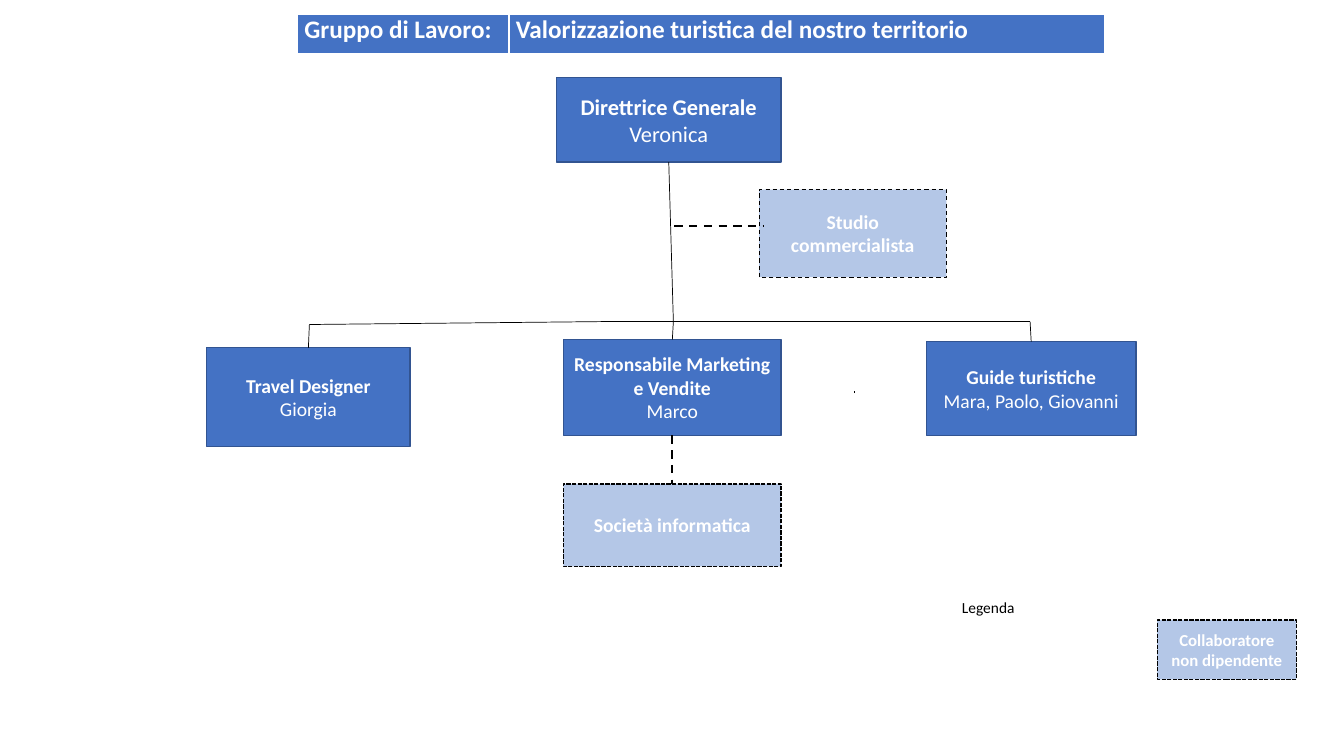
import pptx
import pptx.util
import pptx.dml.color
import pptx.enum.dml
import pptx.enum.shapes
import pptx.enum.text
import pptx.oxml.ns
import lxml.etree

Pt = pptx.util.Pt
DASH = pptx.enum.dml.MSO_LINE_DASH_STYLE
TOP, BOTTOM = 0, 2

COLORS = {"blue": "4472C4", "edge": "325491", "pale": "B4C7E7",
          "white": "FFFFFF", "black": "000000"}
FONT = "Calibri"

HEADER = ["Gruppo di Lavoro:", "Valorizzazione turistica del nostro territorio"]
HEADER_AT = (212.4, 10.1)
HEADER_WIDTHS = [151.2, 425.5]
HEADER_HEIGHT = 28

STYLES = {
    "staff": {"fill": "blue", "line": "edge", "width": 1, "dash": None},
    "partner": {"fill": "pale", "line": "black", "width": 1, "dash": DASH.SQUARE_DOT},
    "adviser": {"fill": "pale", "line": "black", "width": 0.75, "dash": DASH.DASH},
}
BOXES = {
    "director": ("staff", (397.4, 55.4, 160.6, 60.5), 16, "Direttrice Generale", "Veronica"),
    "accountant": ("adviser", (542.2, 135.4, 133.9, 62.6), 14, "Studio commercialista", None),
    "designer": ("staff", (147.6, 248.4, 145.4, 70.6), 14, "Travel Designer", "Giorgia"),
    "marketing": ("staff", (402.5, 242.6, 155.5, 68.4), 14,
                  "Responsabile Marketing e Vendite", "Marco"),
    "guides": ("staff", (661.7, 244.1, 149.8, 67), 14,
               "Guide turistiche", "Mara, Paolo, Giovanni"),
    "software": ("partner", (402.5, 345.6, 155.5, 59), 14, "Società informatica", None),
    "legend": ("partner", (826.6, 442.8, 99.4, 42.5), 12, "Collaboratore non dipendente", None),
}

HUB = (481, 229.7)
LEFT_END, RIGHT_END = (221, 231.8), (735.8, 229.7)
BAR_START = (432, 229.7)
SOLID = {"width": 0.5, "dash": None}
DASHED = {"width": 1.5, "dash": DASH.DASH}
LINES = [
    (("director", BOTTOM), HUB, SOLID),
    (HUB, ("marketing", TOP), SOLID),
    (BAR_START, LEFT_END, SOLID),
    (BAR_START, RIGHT_END, SOLID),
    (LEFT_END, ("designer", TOP), SOLID),
    (RIGHT_END, ("guides", TOP), SOLID),
    ((481.7, 161.3), (545, 161.3), DASHED),
    (("marketing", BOTTOM), ("software", TOP), DASHED),
    ((610.6, 280.8), (610.6, 279.4), SOLID),
]
LEGEND_LABEL = ("Legenda", (680, 422, 70, 24), 11)


def rgb(name):
    return pptx.dml.color.RGBColor.from_string(COLORS[name])


def write(p, text, size, bold, color="white"):
    r = p.add_run()
    r.text = text
    for key, value in {"name": FONT, "size": Pt(size), "bold": bold}.items():
        setattr(r.font, key, value)
    r.font.color.rgb = rgb(color)


def set_line(line, color, width, dash):
    line.color.rgb = rgb(color)
    for key, value in {"width": Pt(width), "dash_style": dash}.items():
        setattr(line, key, value)


def add_box(s, style, at, size, role, people):
    sp = s.shapes.add_shape(pptx.enum.shapes.MSO_SHAPE.RECTANGLE, *map(Pt, at))
    look = STYLES[style]
    sp.shadow.inherit = False
    sp.fill.solid()
    sp.fill.fore_color.rgb = rgb(look["fill"])
    set_line(sp.line, look["line"], look["width"], look["dash"])
    tf = sp.text_frame
    tf.word_wrap = True
    tf.vertical_anchor = pptx.enum.text.MSO_ANCHOR.MIDDLE
    for i, text in enumerate(filter(None, (role, people))):
        p = tf.add_paragraph() if i else tf.paragraphs[0]
        p.alignment = pptx.enum.text.PP_ALIGN.CENTER
        write(p, text, size, i == 0)
    return sp


def add_line(s, boxes, start, end, look):
    points = [(0, 0) if e[0] in boxes else e for e in (start, end)]
    c = s.shapes.add_connector(pptx.enum.shapes.MSO_CONNECTOR.STRAIGHT,
                               *(Pt(v) for point in points for v in point))
    for e, join in ((start, c.begin_connect), (end, c.end_connect)):
        if e[0] in boxes:
            join(boxes[e[0]], e[1])
    set_line(c.line, "black", look["width"], look["dash"])
    lxml.etree.SubElement(c._element.spPr, pptx.oxml.ns.qn("a:effectLst"))


def add_header(s):
    table = s.shapes.add_table(1, len(HEADER), *map(Pt, HEADER_AT),
                               Pt(sum(HEADER_WIDTHS)), Pt(HEADER_HEIGHT)).table
    table.rows[0].height = Pt(HEADER_HEIGHT)
    margins = {"margin_left": Pt(5), "margin_right": Pt(5),
               "margin_top": Pt(0), "margin_bottom": Pt(0)}
    for i, (text, width) in enumerate(zip(HEADER, HEADER_WIDTHS)):
        table.columns[i].width = Pt(width)
        cell = table.cell(0, i)
        for key, value in margins.items():
            setattr(cell, key, value)
        cell.fill.solid()
        cell.fill.fore_color.rgb = rgb("blue")
        write(cell.text_frame.paragraphs[0], text, 18, True)


def main():
    prs = pptx.Presentation()
    prs.slide_width, prs.slide_height = Pt(960), Pt(540)
    s = prs.slides.add_slide(prs.slide_layouts[6])
    boxes = {name: add_box(s, *box) for name, box in BOXES.items()}
    for line in LINES:
        add_line(s, boxes, *line)
    text, at, size = LEGEND_LABEL
    tf = s.shapes.add_textbox(*map(Pt, at)).text_frame
    tf.word_wrap = True
    tf.vertical_anchor = pptx.enum.text.MSO_ANCHOR.MIDDLE
    write(tf.paragraphs[0], text, size, False, "black")
    add_header(s)
    prs.save("out.pptx")


if __name__ == "__main__":
    main()
